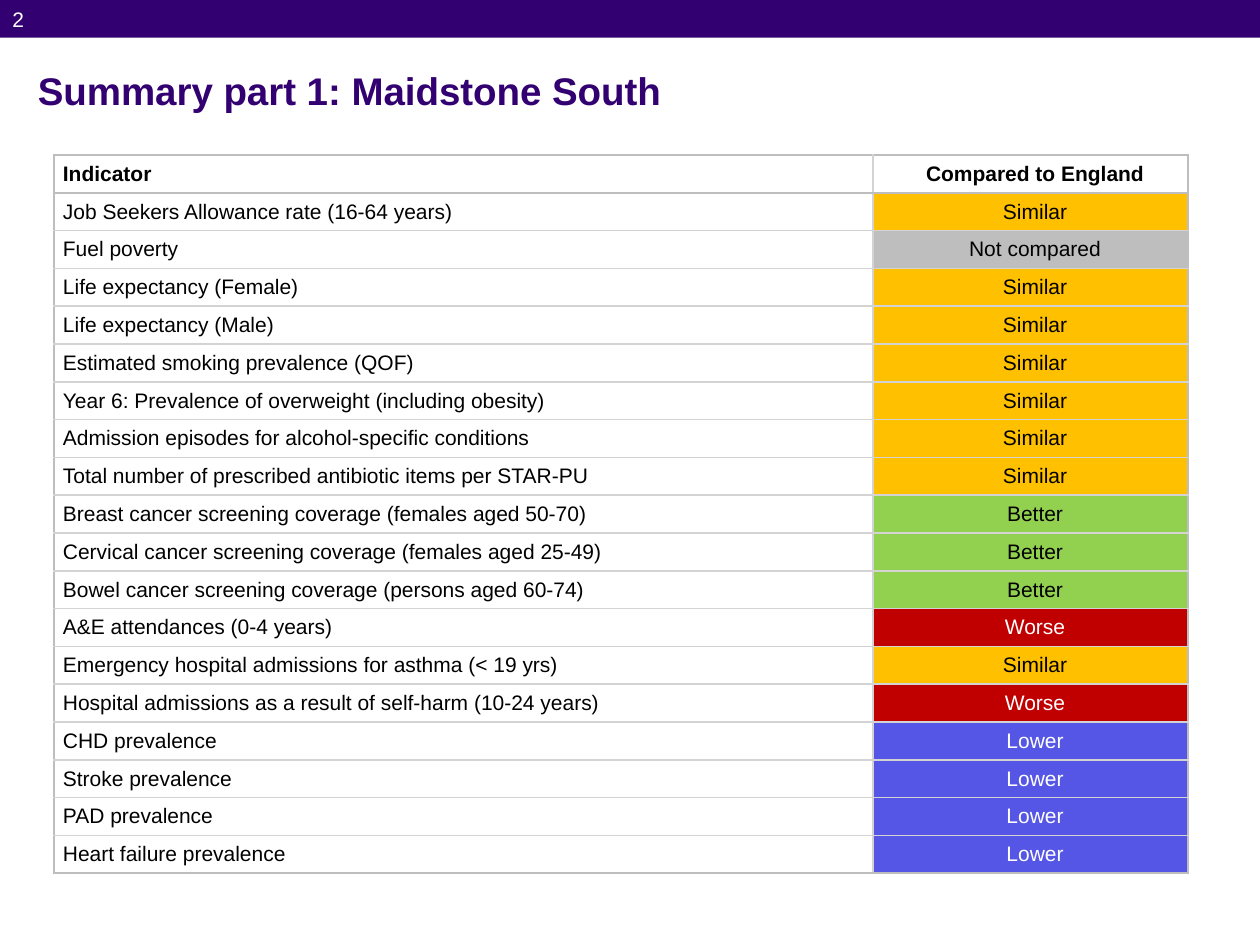
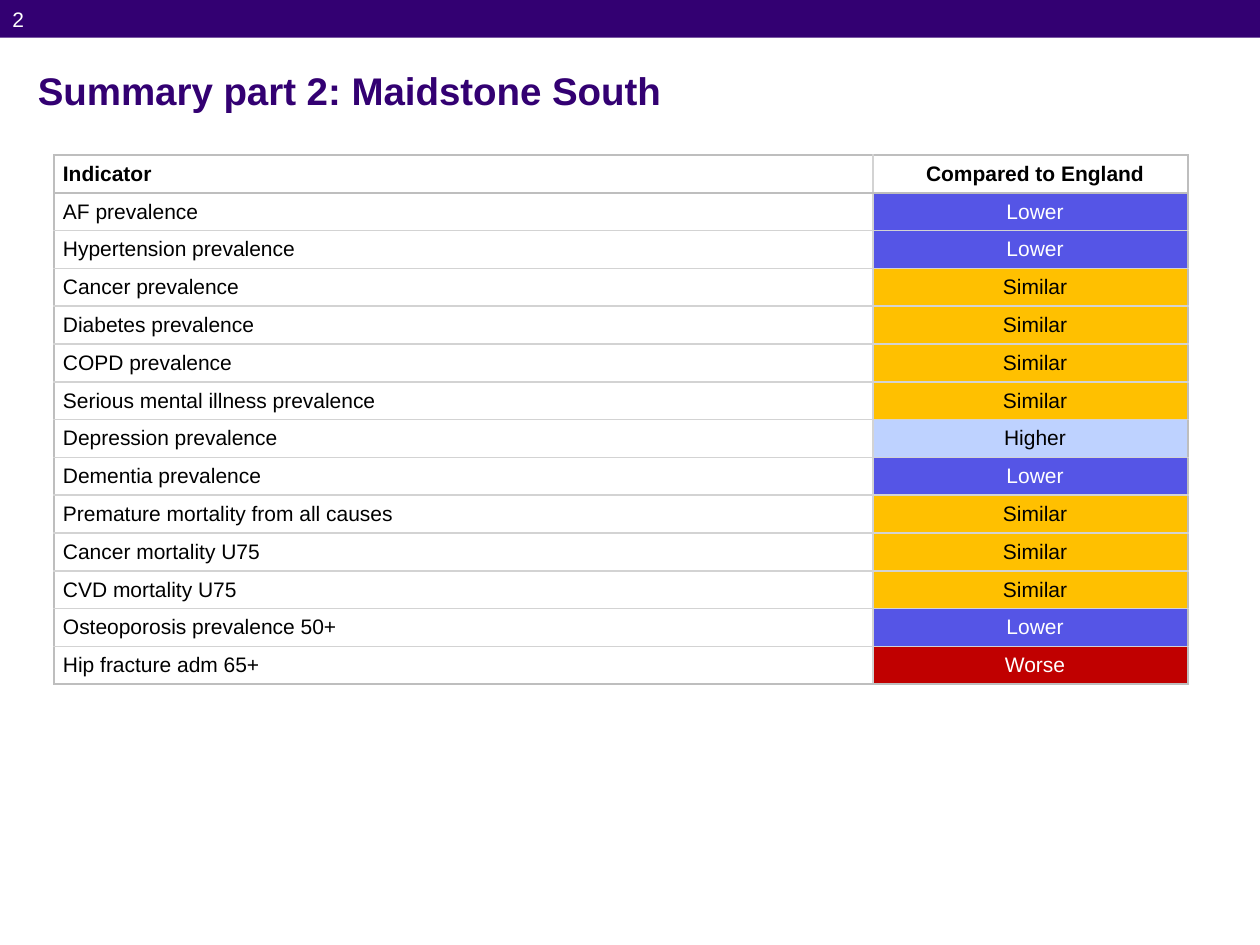
from dataclasses import dataclass

from lxml import etree
from pptx import Presentation
from pptx.dml.color import RGBColor
from pptx.enum import shapes, text
from pptx.oxml import ns
from pptx.util import Inches, Pt


@dataclass(frozen=True)
class Theme:
    font: str = "Arial"
    purple: str = "330072"
    white: str = "FFFFFF"
    black: str = "000000"
    frame: str = "BEBEBE"
    grid: str = "D3D3D3"
    title_size: int = 22
    body_size: int = 12


THEME = Theme()

# Rating: (fill, text colour)
RATINGS = {
    "Similar": ("FFC000", THEME.black),
    "Better": ("92D050", THEME.black),
    "Worse": ("C00000", THEME.white),
    "Lower": ("5555E6", THEME.white),
    "Higher": ("BED2FF", THEME.black),
    "Not compared": ("BEBEBE", THEME.black),
}

# Boxes in inches: left, top, width, height
BAND_BOX = (0, 0, 10, 0.3)
TITLE_BOX = (0.2, 0.47, 9.61, 0.45)
NUMBER_BOX = (0, 0, 0.63, 0.63)
TABLE_AT = (0.43, 1.23)
COLUMNS = (6.5, 2.5)
ROW_HEIGHT = 0.3

HEADER = ("Indicator", "Compared to England")
SLIDES = [
    ("Summary part 1: Maidstone South", "2", [
        ("Job Seekers Allowance rate (16-64 years)", "Similar"),
        ("Fuel poverty", "Not compared"),
        ("Life expectancy (Female)", "Similar"),
        ("Life expectancy (Male)", "Similar"),
        ("Estimated smoking prevalence (QOF)", "Similar"),
        ("Year 6: Prevalence of overweight (including obesity)", "Similar"),
        ("Admission episodes for alcohol-specific conditions", "Similar"),
        ("Total number of prescribed antibiotic items per STAR-PU", "Similar"),
        ("Breast cancer screening coverage (females aged 50-70)", "Better"),
        ("Cervical cancer screening coverage (females aged 25-49)", "Better"),
        ("Bowel cancer screening coverage (persons aged 60-74)", "Better"),
        ("A&E attendances (0-4 years)", "Worse"),
        ("Emergency hospital admissions for asthma (< 19 yrs)", "Similar"),
        ("Hospital admissions as a result of self-harm (10-24 years)", "Worse"),
        ("CHD prevalence", "Lower"),
        ("Stroke prevalence", "Lower"),
        ("PAD prevalence", "Lower"),
        ("Heart failure prevalence", "Lower"),
    ]),
    ("Summary part 2: Maidstone South", "2", [
        ("AF prevalence", "Lower"),
        ("Hypertension prevalence", "Lower"),
        ("Cancer prevalence", "Similar"),
        ("Diabetes prevalence", "Similar"),
        ("COPD prevalence", "Similar"),
        ("Serious mental illness prevalence", "Similar"),
        ("Depression prevalence", "Higher"),
        ("Dementia prevalence", "Lower"),
        ("Premature mortality from all causes", "Similar"),
        ("Cancer mortality U75", "Similar"),
        ("CVD mortality U75", "Similar"),
        ("Osteoporosis prevalence 50+", "Lower"),
        ("Hip fracture adm 65+", "Worse"),
    ]),
]


def set_attrs(obj, **values):
    for name, value in values.items():
        setattr(obj, name, value)


def write(tf, content, color, size=THEME.body_size, bold=False, **paragraph):
    p = tf.paragraphs[0]
    set_attrs(p, **paragraph)
    r = p.add_run()
    r.text = content
    set_attrs(r.font, name=THEME.font, size=Pt(size), bold=bold)
    r.font.color.rgb = RGBColor.from_string(color)


def add_band(slide, box):
    """Place the top band on the layout so that every slide shares it."""
    sp = slide.shapes.add_shape(shapes.MSO_SHAPE.RECTANGLE, *map(Inches, box))
    sp.shadow.inherit = False
    sp.fill.solid()
    sp.fill.fore_color.rgb = RGBColor.from_string(THEME.purple)
    sp.line.fill.background()
    slide.slide_layout.shapes.element.insert(2, sp.element)


def add_title(slide, box, content):
    sp = slide.shapes.title
    left, top, width, height = map(Inches, box)
    set_attrs(sp, left=left, top=top, width=width, height=height)
    tf = sp.text_frame
    set_attrs(tf, word_wrap=True, vertical_anchor=text.MSO_ANCHOR.MIDDLE,
              margin_top=Inches(0.07), margin_bottom=Inches(0.03))
    write(tf, content, THEME.purple, THEME.title_size, True,
          alignment=text.PP_ALIGN.LEFT)


def add_number(slide, box, content):
    tf = slide.shapes.add_textbox(*map(Inches, box)).text_frame
    tf.word_wrap = True
    write(tf, content, THEME.white, space_before=Pt(2.4), space_after=Pt(4.9))


def set_borders(cell, colors):
    tc_pr = cell._tc.get_or_add_tcPr()
    for side, color in colors.items():
        ln = etree.SubElement(tc_pr, ns.qn(f"a:ln{side}"), w=str(Pt(1)))
        fill = etree.SubElement(ln, ns.qn("a:solidFill"))
        etree.SubElement(fill, ns.qn("a:srgbClr"), val=color)


def format_cell(cell, content, row, col, last_row):
    set_attrs(cell, vertical_anchor=text.MSO_ANCHOR.MIDDLE,
              margin_left=Inches(0.07), margin_right=0,
              margin_top=0, margin_bottom=0)

    # The table edge and the header are framed in the darker grey
    framed = {"L": col == 0, "R": col == 1,
              "T": row <= 1, "B": row in (0, last_row)}
    set_borders(cell, {side: THEME.frame if dark else THEME.grid
                       for side, dark in framed.items()})

    # Rating cells take their colours from the rating
    fill, color = RATINGS.get(content, (None, THEME.black))
    if fill:
        cell.fill.solid()
        cell.fill.fore_color.rgb = RGBColor.from_string(fill)
    else:
        cell.fill.background()
    align = text.PP_ALIGN.CENTER if col else text.PP_ALIGN.LEFT
    write(cell.text_frame, content, color, bold=row == 0, alignment=align,
          space_before=Pt(5), space_after=Pt(5))


def add_ratings_table(slide, at, indicators):
    rows = [HEADER, *indicators]
    size = (sum(COLUMNS), ROW_HEIGHT * len(rows))
    table = slide.shapes.add_table(len(rows), len(COLUMNS),
                                   *map(Inches, at + size)).table
    set_attrs(table, first_row=False, horz_banding=False)
    for column, width in zip(table.columns, COLUMNS):
        column.width = Inches(width)
    for i, values in enumerate(rows):
        table.rows[i].height = Inches(ROW_HEIGHT)
        for j, value in enumerate(values):
            format_cell(table.cell(i, j), value, i, j, len(rows) - 1)


def main():
    prs = Presentation()
    set_attrs(prs, slide_width=Inches(10), slide_height=Inches(7.5))
    layout = prs.slide_layouts.get_by_name("Title Only")
    for title, number, indicators in SLIDES:
        slide = prs.slides.add_slide(layout)
        add_title(slide, TITLE_BOX, title)
        add_number(slide, NUMBER_BOX, number)
        add_ratings_table(slide, TABLE_AT, indicators)
    add_band(prs.slides[0], BAND_BOX)
    prs.save("out.pptx")


if __name__ == "__main__":
    main()
